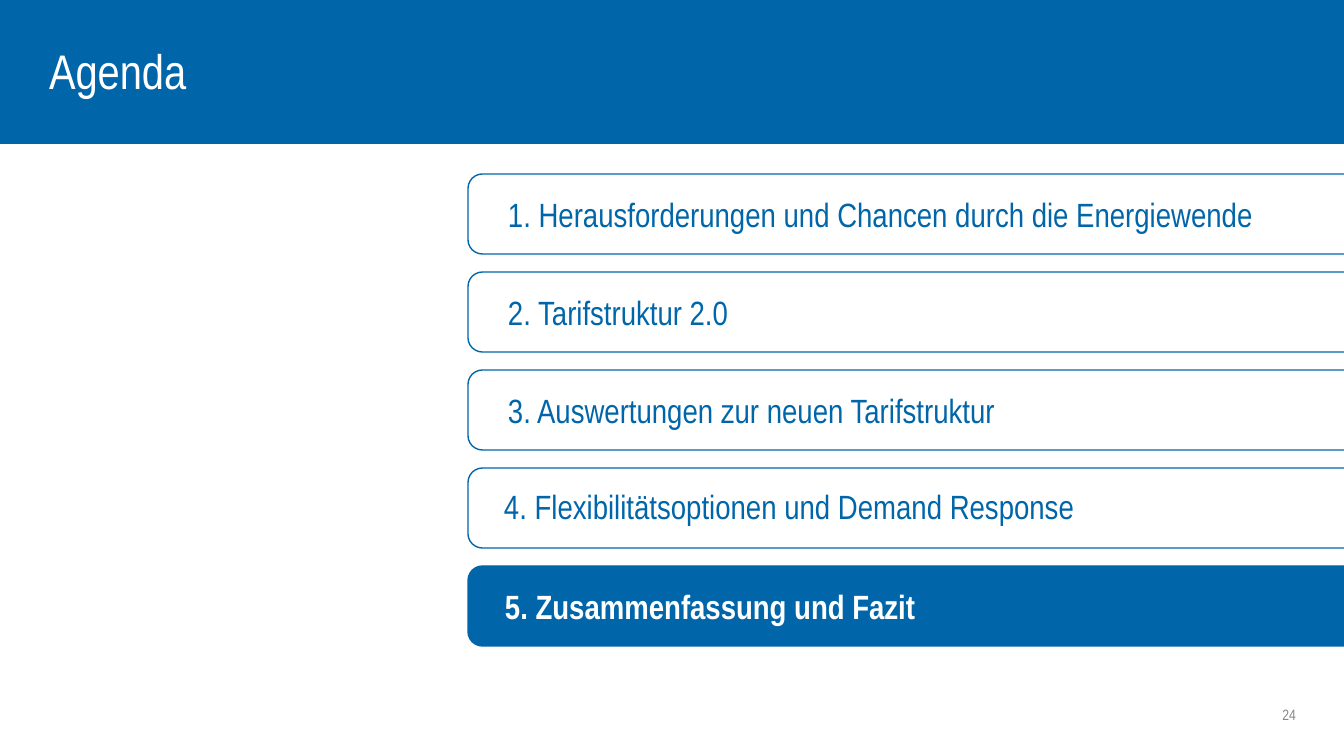
from pptx import Presentation
from pptx.dml.color import RGBColor
from pptx.enum.shapes import MSO_SHAPE
from pptx.enum.text import MSO_ANCHOR, MSO_AUTO_SIZE, PP_ALIGN
from pptx.util import Pt

BLUE = RGBColor(0x00, 0x66, 0xA9)
GREY = RGBColor(0x87, 0x88, 0x8A)
WHITE = RGBColor(0xFF, 0xFF, 0xFF)
FONT = "Arial Narrow"
LEFT, RIGHT = PP_ALIGN.LEFT, PP_ALIGN.RIGHT
MIDDLE, NO_FIT = MSO_ANCHOR.MIDDLE, MSO_AUTO_SIZE.NONE
RECT, TAB = MSO_SHAPE.RECTANGLE, MSO_SHAPE.ROUND_2_SAME_RECTANGLE

TITLE = "Agenda"
NUMBER = "24"
# label, left edge of the text, shift of the text from the row's middle
ITEMS = [
    ("1. Herausforderungen und Chancen durch die Energiewende", 508, 0),
    ("2. Tarifstruktur 2.0", 508, 0),
    ("3. Auswertungen zur neuen Tarifstruktur", 508, 0),
    ("4. Flexibilitätsoptionen und Demand Response", 504, -2),
    ("5. Zusammenfassung und Fazit", 505, 0),
]
ACTIVE = 4

SCALE = 914400 / 100.8
WIDE, HIGH = 1344, 756
BAND = 143
ROW_X, ROW_W, ROW_H = 468, 879, 80
FIRST, PITCH = 214, 98
TEXT_W, TEXT_H = 788, 56


def px(*sizes):
    return [round(size * SCALE) for size in sizes]


def write(box, text, size=24, color=BLUE, bold=False, align=LEFT):
    frame = box.text_frame
    frame.word_wrap = True
    frame.auto_size = NO_FIT
    frame.vertical_anchor = MIDDLE
    frame.margin_left = frame.margin_right = 0
    frame.margin_top = frame.margin_bottom = 0
    frame.text = text
    para = frame.paragraphs[0]
    para.alignment = align
    para.line_spacing = 1.0
    font = para.runs[0].font
    font.name, font.size, font.bold = FONT, Pt(size), bold
    font.color.rgb = color


def draw(slide, kind, left, top, width, height, fill=None):
    shape = slide.shapes.add_shape(kind, *px(left, top, width, height))
    shape.shadow.inherit = False
    if fill is None:
        shape.fill.background()
    else:
        shape.fill.solid()
        shape.fill.fore_color.rgb = fill
    shape.line.color.rgb = BLUE
    shape.line.width = Pt(1)
    return shape


def add_row(slide, index, label, left, shift):
    active = index == ACTIVE
    mid = FIRST + index * PITCH
    # The tab is drawn upright about its centre, then turned to the left.
    tab = draw(slide, TAB, ROW_X + (ROW_W - ROW_H) / 2, mid - ROW_W / 2,
               ROW_H, ROW_W, BLUE if active else None)
    tab.rotation = 270
    tab.adjustments[0], tab.adjustments[1] = 0.18, 0
    box = slide.shapes.add_textbox(
        *px(left, mid + shift - TEXT_H / 2, TEXT_W, TEXT_H))
    write(box, label, color=WHITE if active else BLUE, bold=active)


def main():
    deck = Presentation()
    deck.slide_width, deck.slide_height = px(WIDE, HIGH)
    slide = deck.slides.add_slide(deck.slide_layouts[5])

    title = slide.shapes.title
    title.left, title.top, title.width, title.height = px(49, 44, 975, 52)
    write(title, TITLE, size=34.7, color=WHITE)
    band = draw(slide, RECT, 0, 0, WIDE, BAND, BLUE)
    title.element.addprevious(band.element)

    for index, item in enumerate(ITEMS):
        add_row(slide, index, *item)

    number = slide.shapes.add_textbox(*px(1138, 701, 158, 26))
    write(number, NUMBER, size=10.7, color=GREY, align=RIGHT)
    deck.save("out.pptx")


if __name__ == "__main__":
    main()
